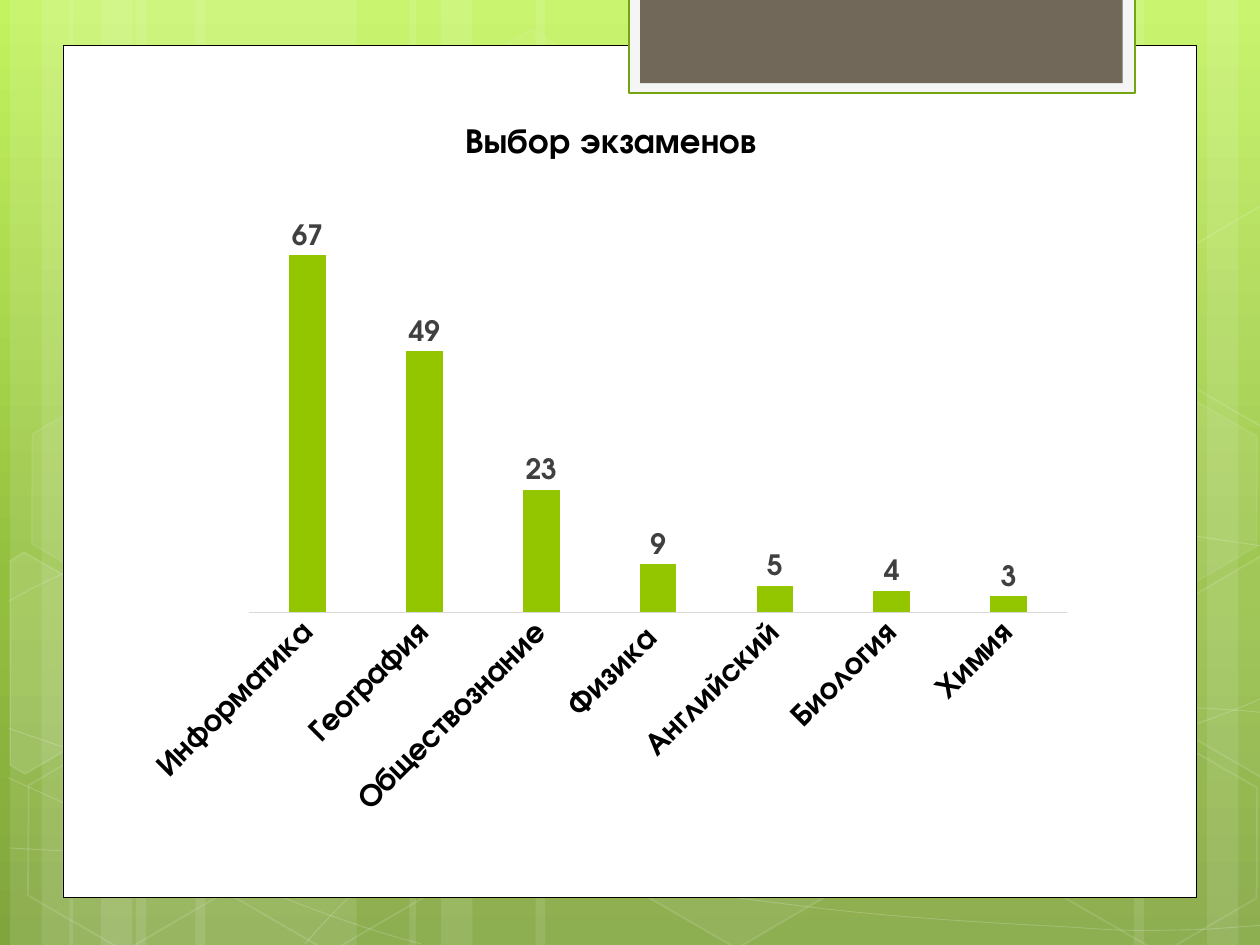
import math
from dataclasses import dataclass

from lxml import etree
from pptx import Presentation
from pptx import util as u
from pptx.chart.data import CategoryChartData
from pptx.dml.color import RGBColor
from pptx.enum import chart as charts, shapes
from pptx.oxml import parse_xml
from pptx.oxml.ns import nsdecls, qn


@dataclass(frozen=True)
class Theme:
    font: str = "TeX Gyre Adventor"
    sky: tuple = ((0, "C3F35F"), (62, "93BF3F"), (100, "81A53E"))
    white: str = "FFFFFF"
    black: str = "000000"
    tab: str = "71685A"
    tab_frame: str = "F5F5F5"
    tab_line: str = "74A510"
    bar: str = "94C600"
    label: str = "404040"
    axis: str = "D9D9D9"
    title_size: int = 20
    category_size: int = 18
    label_size: int = 16


COLUMNS = 10  # the grid is ten square columns wide
TILT = 30  # every hexagon is turned by this angle

# Left, width of the pale vertical stripes
STRIPES = [(1.08, 1.75), (0.08, 0.5), (0.33, 0.83), (1.55, 1.75), (0.55, 0.5),
           (0.8, 0.83), (7.33, 1.75), (9.58, 0.5), (9, 0.83), (4.25, 3.08),
           (3.25, 0.5), (3.5, 0.83)]

# Start point, then two control points and an end point for each curve
WAVES = [
    [(0.07, 6.73), (0.61, 6.76), (1.15, 6.79), (1.9, 6.78), (2.65, 6.77),
     (3.58, 6.75), (4.58, 6.65), (5.58, 6.55), (7, 6.36), (7.92, 6.17),
     (8.83, 5.98), (9.77, 5.68), (10.07, 5.51)],
    [(0.07, 4.77), (0.36, 4.61), (0.65, 4.46), (1.21, 4.31), (1.78, 4.16),
     (2.59, 3.94), (3.47, 3.87), (4.36, 3.8), (5.44, 3.79), (6.54, 3.87),
     (7.64, 3.95), (9.47, 4.26), (10.07, 4.34)],
    [(0.06, 6.17), (1.27, 6.72), (2.47, 7.27), (3.34, 7.49)],
    [(0.07, 5.78), (0.38, 5.89), (0.7, 6), (1.28, 6.16), (1.86, 6.31),
     (2.73, 6.56), (3.57, 6.73), (4.4, 6.9), (5.45, 7.08), (6.28, 7.18),
     (7.11, 7.29), (8, 7.33), (8.53, 7.36), (9.05, 7.4), (9.19, 7.38),
     (9.45, 7.38), (9.71, 7.37), (9.89, 7.35), (10.07, 7.34)],
    [(2.42, 7.49), (2.6, 7.29), (2.78, 7.09), (3.02, 6.91), (3.26, 6.73),
     (3.6, 6.53), (3.88, 6.39), (4.16, 6.25), (4.33, 6.19), (4.7, 6.09),
     (5.06, 5.99), (5.73, 5.85), (6.08, 5.78), (6.44, 5.71), (6.49, 5.71),
     (6.8, 5.69), (7.11, 5.66), (7.6, 5.63), (7.94, 5.62), (8.29, 5.61),
     (8.86, 5.62), (8.86, 5.62), (9.08, 5.62), (9.31, 5.62), (9.53, 5.62),
     (9.71, 5.63), (9.88, 5.64), (9.97, 5.65), (10.06, 5.66), (10.03, 5.65),
     (10.06, 5.66)],
]

# Left, top, fill opacity, line opacity
HEXAGONS = [(3.34, 0.36, 4, 8), (4.97, 5.89, 6, 12), (0.11, 5.91, 0, 12),
            (0.14, 3.12, 7, 8), (1.74, 5.92, 0, 12), (7.53, 4.53, 10, 12),
            (8.34, 5.93, 0, 12), (8.34, 3.14, 7, 8)]

# Hexagons cut by the slide edge: centre, corners, fill opacity
CUT_HEXAGONS = [
    ((0.36, 5.35), [(0.08, 4.45), (0.19, 4.38), (0.96, 4.82), (0.95, 5.7),
                    (0.2, 6.14), (0.08, 6.07)], 10),
    ((9.85, 5.2), [(9.26, 4.85), (10.01, 4.41), (10.09, 4.46), (10.09, 6.13),
                   (10.02, 6.17), (9.26, 5.73)], 4),
    ((9.85, 2.41), [(9.26, 2.07), (10.01, 1.63), (10.1, 1.68), (10.09, 3.35),
                    (10.02, 3.39), (9.26, 2.95)], 0),
]

EXAMS = {"Информатика": 67, "География": 49, "Обществознание": 23,
         "Физика ": 9, "Английский": 5, "Биология": 4, "Химия": 3}


def format_font(font, *, name, size, color, bold=True):
    font.name, font.size, font.bold = name, u.Pt(size), bold
    font.color.rgb = RGBColor.from_string(color)


def write_text(frame, text, **style):
    frame.text = text
    format_font(frame.paragraphs[0].runs[0].font, **style)


def set_opacity(color_format, parent, percent):
    """Colour the fill under parent and give it an opacity."""
    color_format.rgb = RGBColor.from_string(Theme.white)
    color = next(parent.iter(qn("a:srgbClr")))
    etree.SubElement(color, qn("a:alpha")).set("val", str(percent * 1000))


def place(element, **percents):
    """Give a chart part a manual layout in percent of the chart."""
    for old in element.findall(qn("c:layout")):
        element.remove(old)
    layout = etree.Element(qn("c:layout"))
    manual = etree.SubElement(layout, qn("c:manualLayout"))
    if "w" in percents:
        etree.SubElement(manual, qn("c:layoutTarget")).set("val", "inner")
    for axis in "xy":
        etree.SubElement(manual, qn(f"c:{axis}Mode")).set("val", "edge")
    for key, percent in percents.items():
        etree.SubElement(manual, qn(f"c:{key}")).set("val", str(percent / 100))
    text = element.find(qn("c:tx"))
    element.insert(0 if text is None else 1, layout)


def turn(point, center, degrees):
    angle = math.radians(degrees)
    x, y = point[0] - center[0], point[1] - center[1]
    return (center[0] + x * math.cos(angle) - y * math.sin(angle),
            center[1] + x * math.sin(angle) + y * math.cos(angle))


class Painter:
    def __init__(self, deck, theme):
        self.theme = theme
        self.step = deck.slide_width / COLUMNS
        self.slide = deck.slides.add_slide(deck.slide_layouts[6])

    def grid(self, *lengths):
        return [u.Emu(round(length * self.step)) for length in lengths]

    def background(self):
        stops = "".join(f'<a:gs pos="{share * 1000}"><a:srgbClr val="{color}"/></a:gs>'
                        for share, color in self.theme.sky)
        self.slide._element.cSld.insert(0, parse_xml(
            f'<p:bg {nsdecls("p", "a")}><p:bgPr><a:gradFill rotWithShape="1">'
            f'<a:gsLst>{stops}</a:gsLst><a:lin ang="5400000" scaled="0"/>'
            '</a:gradFill><a:effectLst/></p:bgPr></p:bg>'))

    def glass(self, shape, fill=0, line=0, width=1):
        """White see-through fill and line, in percent of opacity."""
        shape.shadow.inherit = False
        shape.fill.background()
        shape.line.fill.background()
        if fill:
            shape.fill.solid()
            set_opacity(shape.fill.fore_color, shape._element.spPr, fill)
        if line:
            shape.line.width = u.Pt(width)
            shape.line.fill.solid()
            set_opacity(shape.line.fill.fore_color, shape.line._get_or_add_ln(), line)

    def preset(self, kind, *at):
        return self.slide.shapes.add_shape(kind, *self.grid(*at))

    def panel(self, *at, fill, line=None, width=1):
        box = self.preset(shapes.MSO_SHAPE.RECTANGLE, *at)
        box.shadow.inherit = False
        box.fill.solid()
        box.fill.fore_color.rgb = RGBColor.from_string(fill)
        if line:
            box.line.color.rgb = RGBColor.from_string(line)
            box.line.width = u.Pt(width)
        else:
            box.line.fill.background()

    def stripe(self, left, width):
        self.glass(self.preset(shapes.MSO_SHAPE.RECTANGLE, left, 0, width, 7.5), fill=10)

    def hexagon(self, left, top, fill, line):
        shape = self.preset(shapes.MSO_SHAPE.HEXAGON, left, top, 1.75, 1.52)
        shape.adjustments[0] = 0.285
        shape.rotation = TILT
        self.glass(shape, fill, line)

    def outline(self, points, closed=False):
        first, *rest = [self.grid(*point) for point in points]
        builder = self.slide.shapes.build_freeform(*first)
        builder.add_line_segments(rest, close=closed)
        return builder.convert_to_shape()

    def wave(self, points):
        """Join every three points after the start into one cubic curve."""
        shape = self.outline(points)
        lines = list(shape._element.iter(qn("a:lnTo")))
        for i in range(0, len(lines), 3):
            curve = etree.Element(qn("a:cubicBezTo"))
            lines[i].addprevious(curve)
            for line in lines[i:i + 3]:
                curve.append(line[0])
                line.getparent().remove(line)
        self.glass(shape, line=20, width=0.5)

    def cut_hexagon(self, center, corners, fill):
        shape = self.outline([turn(corner, center, -TILT) for corner in corners], closed=True)
        shape.rotation = TILT
        self.glass(shape, fill, line=12)

    def column_chart(self, title, values, *at):
        theme = self.theme
        data = CategoryChartData()
        data.categories = list(values)
        data.add_series("Series 1", list(values.values()))
        chart = self.slide.shapes.add_chart(
            charts.XL_CHART_TYPE.COLUMN_CLUSTERED, *self.grid(*at), data).chart
        chart.has_legend = False
        format_font(chart.font, name=theme.font, size=10, color=theme.black, bold=False)
        write_text(chart.chart_title.text_frame, title, name=theme.font,
                   size=theme.title_size, color=theme.black)
        place(chart.chart_title._element, x=34.15, y=2.86)
        place(chart._chartSpace.chart.plotArea, x=12.12, y=12.33, w=85.9, h=58)

        # Axes
        names, scale = chart.category_axis, chart.value_axis
        names.major_tick_mark = charts.XL_TICK_MARK.NONE
        names.format.line.color.rgb = RGBColor.from_string(theme.axis)
        names.format.line.width = u.Pt(0.75)
        format_font(names.tick_labels.font, name=theme.font,
                    size=theme.category_size, color=theme.black)
        names._element.find(qn("c:txPr")).find(qn("a:bodyPr")).set("rot", "-2700000")
        scale.minimum_scale, scale.maximum_scale = 0, 80
        scale.has_major_gridlines = scale.visible = False

        # Columns and their values
        plot = chart.plots[0]
        plot.gap_width, plot.overlap, plot.vary_by_categories = 219, -27, False
        fill = plot.series[0].format.fill
        fill.solid()
        fill.fore_color.rgb = RGBColor.from_string(theme.bar)
        labels = plot.series[0].data_labels
        labels.show_value = True
        labels.position = charts.XL_LABEL_POSITION.OUTSIDE_END
        format_font(labels.font, name=theme.font, size=theme.label_size, color=theme.label)


def main():
    deck = Presentation()
    deck.slide_width, deck.slide_height = u.Inches(10), u.Inches(7.5)
    theme = Theme()
    painter = Painter(deck, theme)

    # Backdrop
    painter.background()
    for paint, items in ((painter.stripe, STRIPES), (painter.hexagon, HEXAGONS),
                         (painter.cut_hexagon, CUT_HEXAGONS)):
        for item in items:
            paint(*item)
    for points in WAVES:
        painter.wave(points)

    # Page and its tab
    painter.panel(0.5, 0.36, 9, 6.76, fill=theme.white, line=theme.black, width=0.5)
    painter.panel(4.99, -0.02, 4.02, 0.76, fill=theme.tab_frame, line=theme.tab_line, width=1.25)
    painter.panel(5.08, -0.02, 3.83, 0.68, fill=theme.tab)

    # Exam choices
    painter.column_chart("Выбор экзаменов", EXAMS, 1.06, 0.76, 7.56, 5.83)
    deck.save("out.pptx")


if __name__ == "__main__":
    main()
